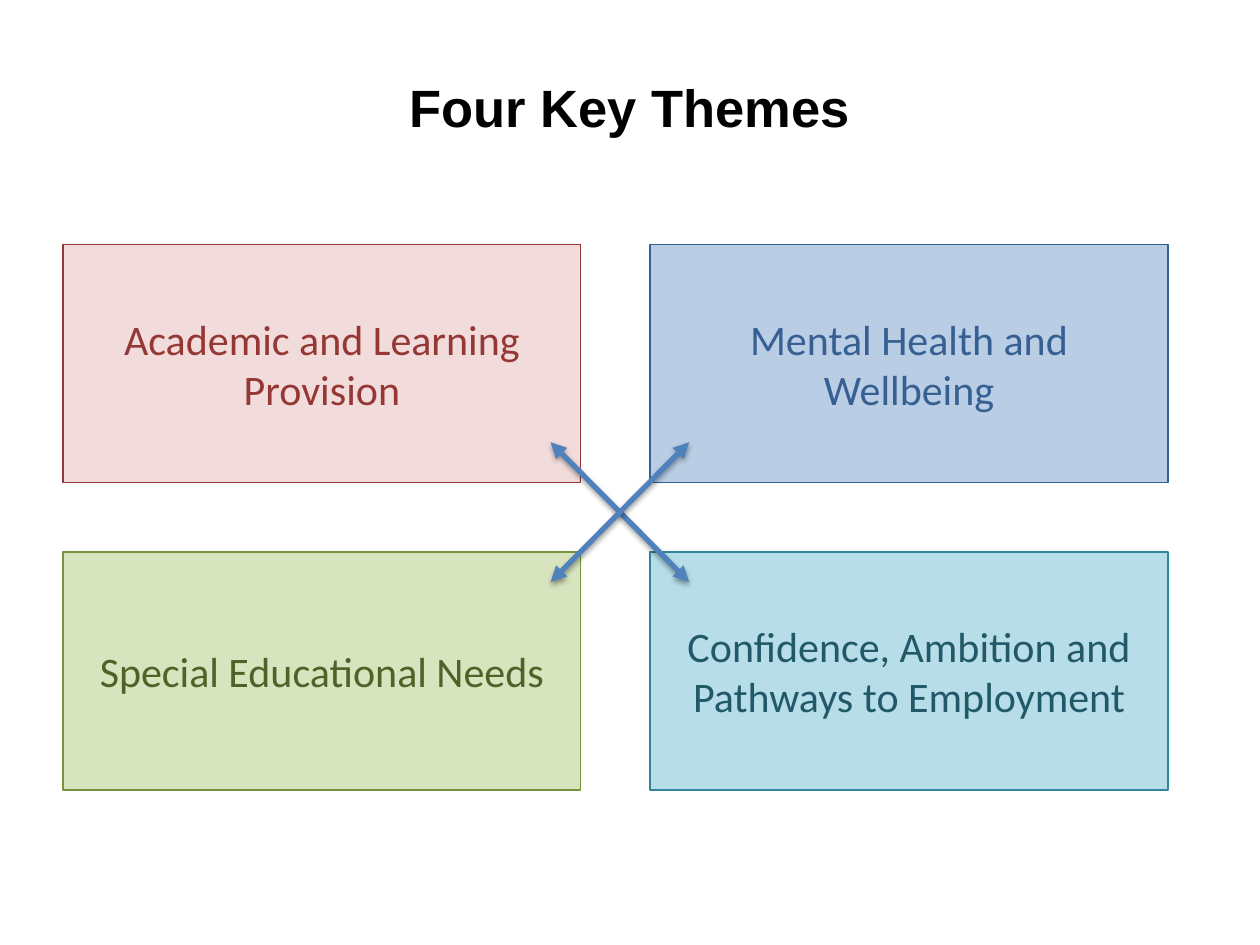
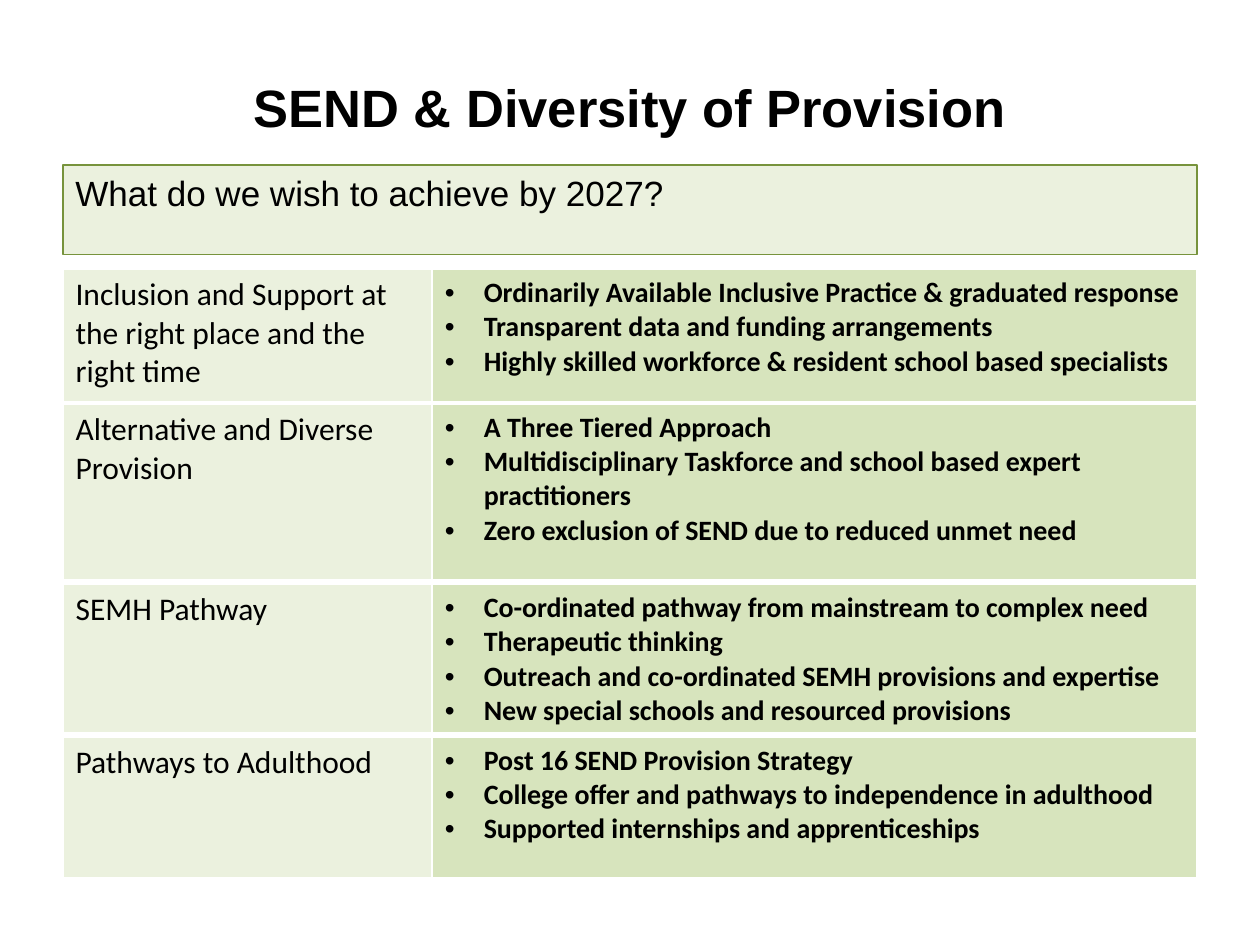
from lxml import etree
from pptx import Presentation
from pptx import util as u
from pptx.dml.color import RGBColor
from pptx.enum import shapes, text
from pptx.oxml import parse_xml
from pptx.oxml.ns import nsdecls, qn

BLACK = RGBColor(0x00, 0x00, 0x00)
BLUE = RGBColor(0x4F, 0x81, 0xBD)
ROSE = RGBColor(0xF2, 0xDC, 0xDB)
RED = RGBColor(0x95, 0x37, 0x35)
SKY = RGBColor(0xB9, 0xCD, 0xE5)
NAVY = RGBColor(0x37, 0x60, 0x92)
LIME = RGBColor(0xD7, 0xE4, 0xBD)
LEAF = RGBColor(0x77, 0x93, 0x3C)
MOSS = RGBColor(0x4F, 0x62, 0x28)
MIST = RGBColor(0xEB, 0xF1, 0xDE)
AQUA = RGBColor(0xB7, 0xDE, 0xE8)
TEAL = RGBColor(0x31, 0x85, 0x9C)
DEEP = RGBColor(0x21, 0x59, 0x68)

LEFT, WIDTH = 0.5, 9
HEAD, BODY = "Arial", "Calibri"
MID, START = text.PP_ALIGN.CENTER, text.PP_ALIGN.LEFT

SHADE = (
    f'<a:effectLst {nsdecls("a")}>'
    '<a:outerShdw blurRad="39370" dist="20320" dir="5400000" rotWithShape="0">'
    '<a:srgbClr val="000000"><a:alpha val="38000"/></a:srgbClr>'
    '</a:outerShdw></a:effectLst>'
)


class Deck:
    def __init__(self):
        self.prs = Presentation()
        self.prs.slide_width = u.Inches(10)
        self.prs.slide_height = u.Inches(7.5)
        self.slide = None

    def page(self, title):
        self.slide = self.prs.slides.add_slide(self.prs.slide_layouts[5])
        head = self.slide.shapes.title
        head.left, head.top = u.Inches(LEFT), u.Inches(0.5)
        head.width, head.height = u.Inches(WIDTH), u.Inches(0.69)
        head.text_frame.vertical_anchor = text.MSO_ANCHOR.MIDDLE
        self.put(head.text_frame.paragraphs[0], title, 30, BLACK, HEAD, True, MID)

    def put(self, para, words, size, color, face=BODY, bold=False, align=START):
        para.alignment = align
        run = para.add_run()
        run.text = words
        font = run.font
        font.size, font.name, font.bold = u.Pt(size), face, bold
        font.color.rgb = color

    def box(self, x, y, w, h, fill, edge, anchor):
        item = self.slide.shapes.add_shape(
            shapes.MSO_SHAPE.RECTANGLE,
            u.Inches(x), u.Inches(y), u.Inches(w), u.Inches(h))
        item.shadow.inherit = False
        item.fill.solid()
        item.fill.fore_color.rgb = fill
        item.line.color.rgb = edge
        item.line.width = u.Pt(0.75)
        frame = item.text_frame
        frame.word_wrap = True
        frame.vertical_anchor = anchor
        return frame.paragraphs[0]

    def arrow(self, x1, y1, x2, y2):
        link = self.slide.shapes.add_connector(
            shapes.MSO_CONNECTOR.STRAIGHT,
            u.Inches(x1), u.Inches(y1), u.Inches(x2), u.Inches(y2))
        link.line.color.rgb = BLUE
        link.line.width = u.Pt(3)
        props = link._element.spPr
        line = props.find(qn("a:ln"))
        for end in ("a:headEnd", "a:tailEnd"):
            etree.SubElement(line, qn(end), type="triangle")
        props.append(parse_xml(SHADE))

    def bullet(self, para):
        props = para._p.get_or_add_pPr()
        indent = u.Inches(0.31)
        props.set("marL", str(indent))
        props.set("indent", str(-indent))
        etree.SubElement(props, qn("a:buFont"), typeface="Arial")
        etree.SubElement(props, qn("a:buChar"), char="•")

    def style(self, cell, fill):
        props = cell._tc.get_or_add_tcPr()
        for side, width in (("L", 1), ("R", 1), ("T", 1), ("B", 3)):
            line = etree.SubElement(props, qn(f"a:ln{side}"), w=str(u.Pt(width)))
            paint = etree.SubElement(line, qn("a:solidFill"))
            etree.SubElement(paint, qn("a:srgbClr"), val="FFFFFF")
        cell.fill.solid()
        cell.fill.fore_color.rgb = fill

    def table(self, y, h, theme, goals):
        grid = self.slide.shapes.add_table(
            1, 2, u.Inches(LEFT), u.Inches(y), u.Inches(WIDTH), u.Inches(h)).table
        grid.first_row = grid.horz_banding = False
        for col, width in zip(grid.columns, (2.93, 6.07)):
            col.width = u.Inches(width)
        name, aims = grid.cell(0, 0), grid.cell(0, 1)
        self.style(name, MIST)
        self.style(aims, LIME)
        self.put(name.text_frame.paragraphs[0], theme, 18, BLACK)
        frame = aims.text_frame
        for i, goal in enumerate(goals):
            para = frame.add_paragraph() if i else frame.paragraphs[0]
            self.bullet(para)
            self.put(para, goal, 16, BLACK, bold=True)


def themes(deck):
    deck.page("Four Key Themes")
    cards = [
        ("Academic and Learning Provision", ROSE, RED, RED),
        ("Mental Health and Wellbeing", SKY, NAVY, NAVY),
        ("Special Educational Needs", LIME, LEAF, MOSS),
        ("Confidence, Ambition and Pathways to Employment", AQUA, TEAL, DEEP),
    ]
    wide, high, gap, top = 4.11, 1.89, 0.55, 1.94
    for i, (words, fill, edge, ink) in enumerate(cards):
        row, col = divmod(i, 2)
        para = deck.box(LEFT + col * (wide + gap), top + row * (high + gap),
                        wide, high, fill, edge, text.MSO_ANCHOR.MIDDLE)
        deck.put(para, words, 24, ink, align=MID)
    x1, x2, y1, y2 = 4.37, 5.47, 3.51, 4.62
    deck.arrow(x1, y1, x2, y2)
    deck.arrow(x2, y1, x1, y2)


def goals(deck):
    deck.page("SEND & Diversity of Provision")
    para = deck.box(LEFT, 1.31, WIDTH, 0.71, MIST, LEAF, text.MSO_ANCHOR.TOP)
    deck.put(para, "What do we wish to achieve by 2027?", 20, BLACK, HEAD)
    rows = [
        (2.14, 1.06, "Inclusion and Support at the right place and the right time", [
            "Ordinarily Available Inclusive Practice & graduated response",
            "Transparent data and funding arrangements",
            "Highly skilled workforce & resident school based specialists"]),
        (3.21, 1.4, "Alternative and Diverse Provision", [
            "A Three Tiered Approach",
            "Multidisciplinary Taskforce and school based expert practitioners",
            "Zero exclusion of SEND due to reduced unmet need"]),
        (4.64, 1.17, "SEMH Pathway", [
            "Co-ordinated pathway from mainstream to complex need",
            "Therapeutic thinking",
            "Outreach and co-ordinated SEMH provisions and expertise",
            "New special schools and resourced provisions"]),
        (5.85, 1.13, "Pathways to Adulthood", [
            "Post 16 SEND Provision Strategy",
            "College offer and pathways to independence in adulthood",
            "Supported internships and apprenticeships"]),
    ]
    for row in rows:
        deck.table(*row)


def main():
    deck = Deck()
    themes(deck)
    goals(deck)
    deck.prs.save("out.pptx")


if __name__ == "__main__":
    main()
